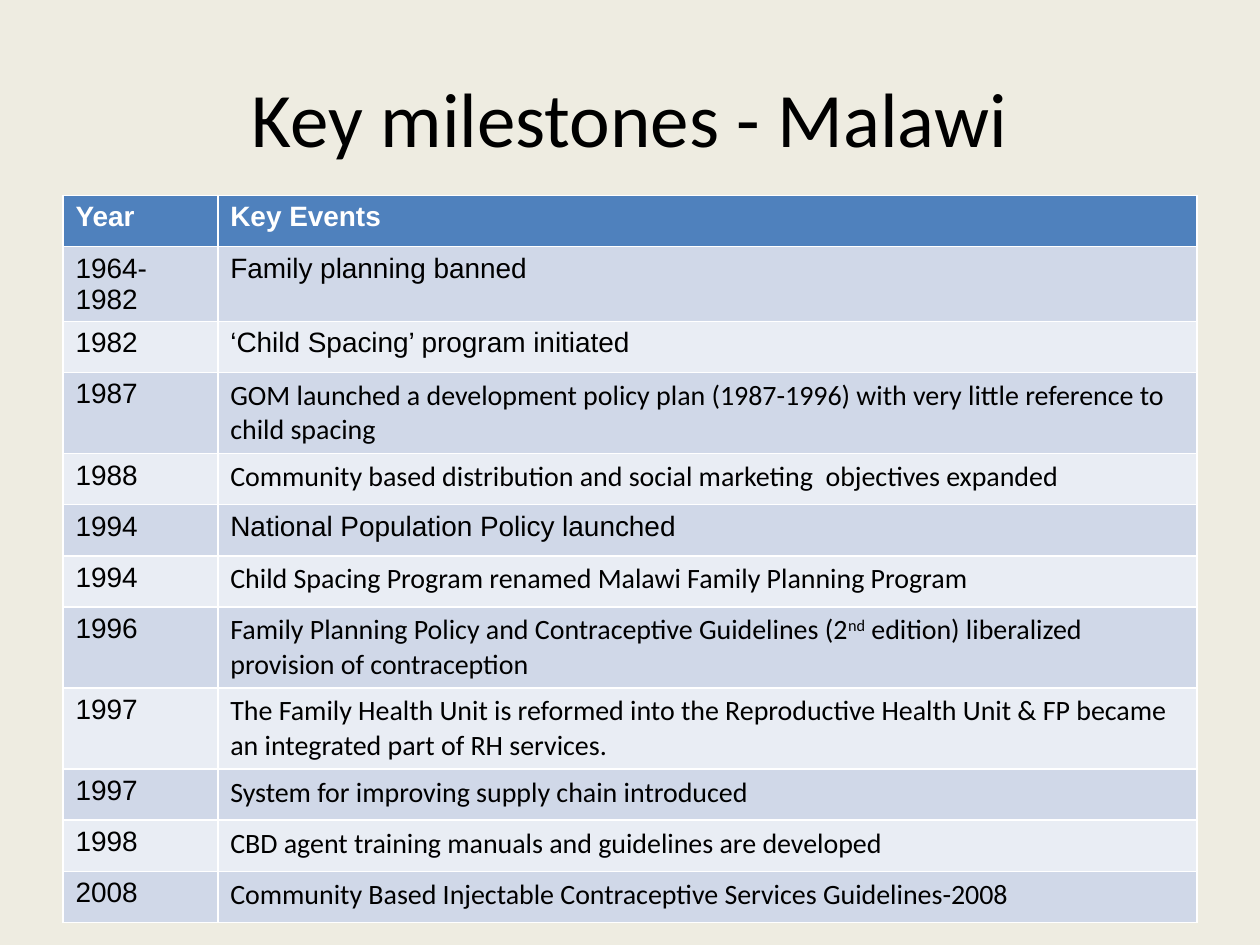
from pptx import Presentation
from pptx.dml.color import RGBColor
from pptx.enum.text import MSO_ANCHOR, PP_ALIGN
from pptx.util import Cm, Pt

LEFT, WIDTH = 1.27, 22.86
TITLE_TOP, TITLE_HEIGHT = 0.76, 3.18
TABLE_TOP, ROW_HEIGHT = 3.94, 1.03
YEAR_WIDTH = 3.12
HEADER_FILL = "4F81BD"
BAND_FILLS = ("D0D8E8", "E9EDF4")

HEADINGS = ("Year", "Key Events")
MILESTONES = [
    ("1964-1982", "Family planning banned", "Arial"),
    ("1982", "‘Child Spacing’ program initiated", "Arial"),
    ("1987", "GOM launched a development policy plan (1987-1996) with very "
             "little reference to child spacing", "Calibri"),
    ("1988", "Community based distribution and social marketing  objectives "
             "expanded", "Calibri"),
    ("1994", "National Population Policy launched", "Arial"),
    ("1994", "Child Spacing Program renamed Malawi Family Planning Program",
     "Calibri"),
    ("1996", ("Family Planning Policy and Contraceptive Guidelines (2", "nd",
              " edition) liberalized provision of contraception"), "Calibri"),
    ("1997", "The Family Health Unit is reformed into the Reproductive Health "
             "Unit & FP became an integrated part of RH services.", "Calibri"),
    ("1997", "System for improving supply chain introduced", "Calibri"),
    ("1998", "CBD agent training manuals and guidelines are developed",
     "Calibri"),
    ("2008", "Community Based Injectable Contraceptive Services "
             "Guidelines-2008", "Calibri"),
]


def paint(fill, color):
    fill.solid()
    fill.fore_color.rgb = RGBColor.from_string(color)


def add_text(paragraph, text, font="Arial", size=16, color="000000",
             bold=False, superscript=False):
    run = paragraph.add_run()
    run.text = text
    run.font.name = font
    run.font.size = Pt(size)
    run.font.bold = bold
    run.font.color.rgb = RGBColor.from_string(color)
    if superscript:
        run._r.get_or_add_rPr().set("baseline", "30000")


def fill_cell(cell, text, fill, **text_format):
    paint(cell.fill, fill)
    paragraph = cell.text_frame.paragraphs[0]
    parts = (text,) if isinstance(text, str) else text
    for index, part in enumerate(parts):
        add_text(paragraph, part, superscript=index % 2 == 1, **text_format)


def set_title(slide, text):
    title = slide.shapes.title
    title.left, title.top = Cm(LEFT), Cm(TITLE_TOP)
    title.width, title.height = Cm(WIDTH), Cm(TITLE_HEIGHT)
    title.text_frame.vertical_anchor = MSO_ANCHOR.MIDDLE
    paragraph = title.text_frame.paragraphs[0]
    paragraph.alignment = PP_ALIGN.CENTER
    add_text(paragraph, text, font="Calibri", size=44)


def add_milestone_table(slide):
    row_count = len(MILESTONES) + 1
    table = slide.shapes.add_table(
        row_count, len(HEADINGS), Cm(LEFT), Cm(TABLE_TOP),
        Cm(WIDTH), Cm(ROW_HEIGHT * row_count)).table
    table.columns[0].width = Cm(YEAR_WIDTH)
    table.columns[1].width = Cm(WIDTH - YEAR_WIDTH)
    for row in table.rows:
        row.height = Cm(ROW_HEIGHT)
    for column, heading in enumerate(HEADINGS):
        fill_cell(table.cell(0, column), heading, HEADER_FILL,
                  color="FFFFFF", bold=True)
    for index, (year, event, font) in enumerate(MILESTONES):
        band = BAND_FILLS[index % 2]
        fill_cell(table.cell(index + 1, 0), year, band)
        fill_cell(table.cell(index + 1, 1), event, band, font=font)


def main():
    presentation = Presentation()
    presentation.slide_width, presentation.slide_height = Cm(25.4), Cm(19.05)
    slide = presentation.slides.add_slide(presentation.slide_layouts[5])
    paint(slide.background.fill, "EEECE1")
    set_title(slide, "Key milestones - Malawi")
    add_milestone_table(slide)
    presentation.save("out.pptx")


if __name__ == "__main__":
    main()
